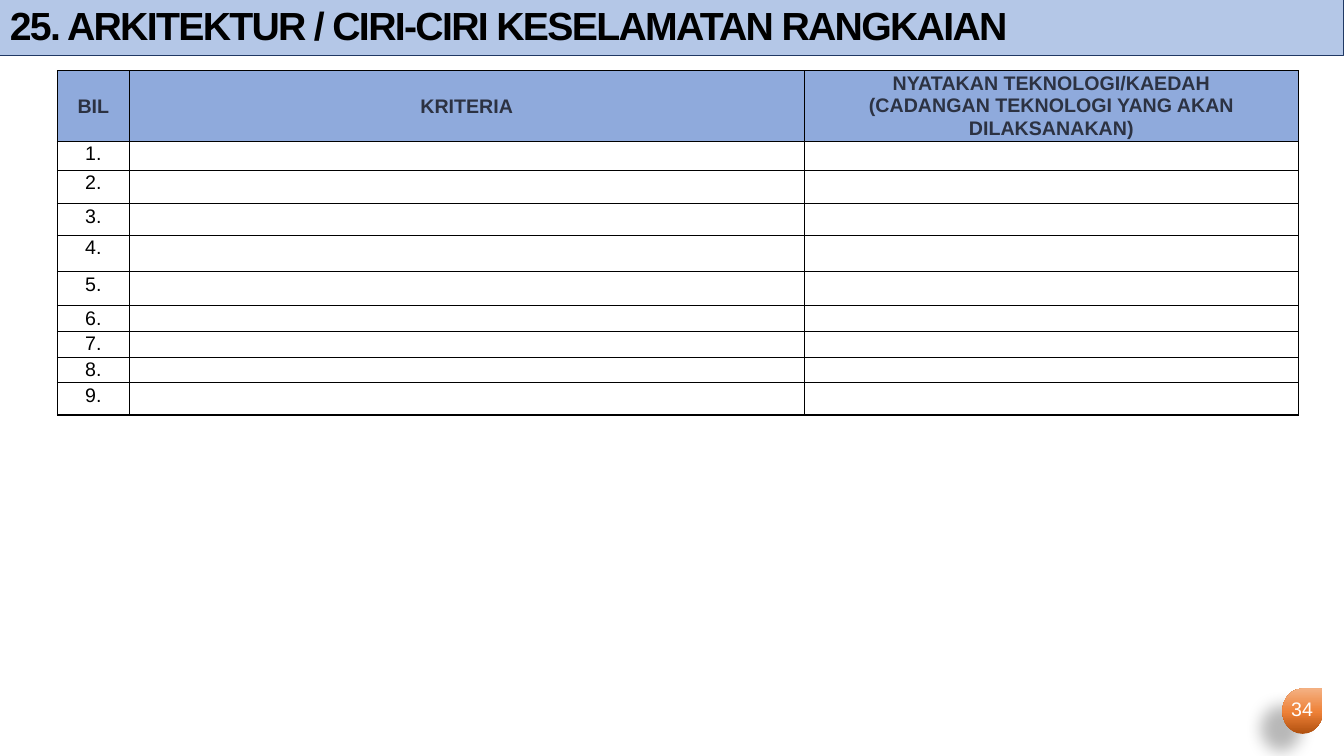
from lxml.etree import SubElement as Sub
from pptx import Presentation
from pptx.dml.color import RGBColor
from pptx.enum.shapes import MSO_SHAPE as Form
from pptx.enum.text import MSO_ANCHOR as Anchor, PP_ALIGN as Align
from pptx.oxml.ns import qn
from pptx.util import Inches, Pt


def hue(code):
    return RGBColor.from_string(code)


def node(root, tag, **keys):
    return Sub(root, qn("a:" + tag), {k: str(v) for k, v in keys.items()})


def apply(item, form):
    for key, val in form.items():
        setattr(item, key, val)


class Deck:
    """Holds the style and the slide; lengths are percent of slide size."""
    face = "Arial"
    ink = "000000"
    head = {"size": Pt(14), "bold": True}
    body = {"size": Pt(14), "bold": False}
    pad = {"margin_left": Inches(0.06), "margin_right": Inches(0.06),
           "margin_top": 0, "margin_bottom": 0}
    loose = {"alignment": Align.CENTER, "line_spacing": 1.07,
             "space_after": Pt(8)}
    tight = {"alignment": Align.CENTER}

    def __init__(self):
        self.file = Presentation()
        apply(self.file, {"slide_width": Inches(13.333),
                          "slide_height": Inches(7.5)})
        self.slide = self.file.slides.add_slide(self.file.slide_layouts[6])

    def wide(self, share):
        return round(self.file.slide_width * share / 100)

    def high(self, share):
        return round(self.file.slide_height * share / 100)

    def box(self, x, y, w, h):
        return self.wide(x), self.high(y), self.wide(w), self.high(h)

    def text(self, frame, lines, font, para, color):
        for i, line in enumerate(lines):
            part = frame.add_paragraph() if i else frame.paragraphs[0]
            apply(part, para)
            run = part.add_run()
            run.text = line
            apply(run.font, {"name": self.face, **font})
            run.font.color.rgb = hue(color)

    def shape(self, form, area):
        item = self.slide.shapes.add_shape(form, *self.box(*area))
        item.shadow.inherit = False
        return item

    def title(self, area, words, fill, edge):
        bar = self.shape(Form.RECTANGLE, area)
        bar.fill.solid()
        bar.fill.fore_color.rgb = hue(fill)
        bar.line.color.rgb = hue(edge)
        bar.line.width = Pt(0.75)
        bar.text_frame.vertical_anchor = Anchor.MIDDLE
        self.text(bar.text_frame, [words], {"size": Pt(28), "bold": True},
                  {"alignment": Align.LEFT, "line_spacing": 0.9}, self.ink)
        run = bar.text_frame.paragraphs[0].runs[0]
        run.font._element.set("spc", "-120")

    def drop(self, area, stops):
        item = self.shape(Form.TEAR, area)
        item.line.fill.background()
        item.fill.gradient()
        item.fill.gradient_angle = 90
        props = item._element.spPr
        bands = props.find(qn("a:gradFill")).find(qn("a:gsLst"))
        for old in list(bands):
            bands.remove(old)
        for pos, code in stops:
            node(node(bands, "gs", pos=pos * 1000), "srgbClr", val=code)
        # Soft shadow to the lower left
        cast = node(props.find(qn("a:effectLst")), "outerShdw",
                    blurRad=Pt(11.8), dist=Pt(19.7), dir=141 * 60000,
                    algn="ctr", rotWithShape=0)
        node(node(cast, "srgbClr", val=self.ink), "alpha", val=28000)

    def label(self, area, words, color):
        frame = self.slide.shapes.add_textbox(*self.box(*area)).text_frame
        frame.word_wrap = True
        self.text(frame, [words], self.body, self.tight, color)

    def cell(self, cell, lines, top, fill):
        apply(cell, self.pad)
        props = cell._tc.get_or_add_tcPr()
        for side in ("lnL", "lnR", "lnT", "lnB"):
            line = node(props, side, w=Pt(1))
            node(node(line, "solidFill"), "srgbClr", val=self.ink)
        if top:
            cell.vertical_anchor = Anchor.MIDDLE
            cell.fill.solid()
            cell.fill.fore_color.rgb = hue(fill)
        else:
            cell.fill.background()
        if lines:
            self.text(cell.text_frame, lines, self.head if top else self.body,
                      self.tight if len(lines) > 1 else self.loose,
                      "2C3242" if top else self.ink)
        else:
            # Small end mark keeps an empty row from growing
            node(cell.text_frame.paragraphs[0]._p, "endParaRPr", sz=1000)

    def table(self, x, y, cols, rows, data, fill):
        area = self.box(x, y, sum(cols), sum(rows))
        grid = self.slide.shapes.add_table(len(rows), len(cols), *area).table
        apply(grid, {"first_row": False, "horz_banding": False})
        for col, size in zip(grid.columns, cols):
            col.width = self.wide(size)
        for r, (row, size) in enumerate(zip(grid.rows, rows)):
            row.height = self.high(size)
            for cell, lines in zip(row.cells, data[r]):
                self.cell(cell, lines, r == 0, fill)


def main():
    deck = Deck()

    # Page number badge
    deck.drop((95.42, 91.07, 3, 6),
              [(0, "B0500F"), (48, "EE8137"), (100, "F4B183")])
    deck.label((95.05, 91.47, 3.68, 5.33), "34", "FFFFFF")

    # Title bar
    deck.title((0, 0, 100, 7.33),
               "25. ARKITEKTUR / CIRI-CIRI KESELAMATAN RANGKAIAN",
               "B4C7E7", "203864")

    # Criteria table
    heads = [["BIL"], ["KRITERIA"],
             ["NYATAKAN TEKNOLOGI/KAEDAH",
              "(CADANGAN TEKNOLOGI YANG AKAN DILAKSANAKAN)"]]
    rows = [9.3, 3.85, 4.4, 4.2, 4.8, 4.5, 3.4, 3.4, 3.4, 4.25]
    data = [heads] + [[[f"{n}."], [], []] for n in range(1, len(rows))]
    deck.table(4.28, 9.37, [5.33, 50.25, 36.75], rows, data, "8FAADC")

    deck.file.save("out.pptx")


if __name__ == "__main__":
    main()
